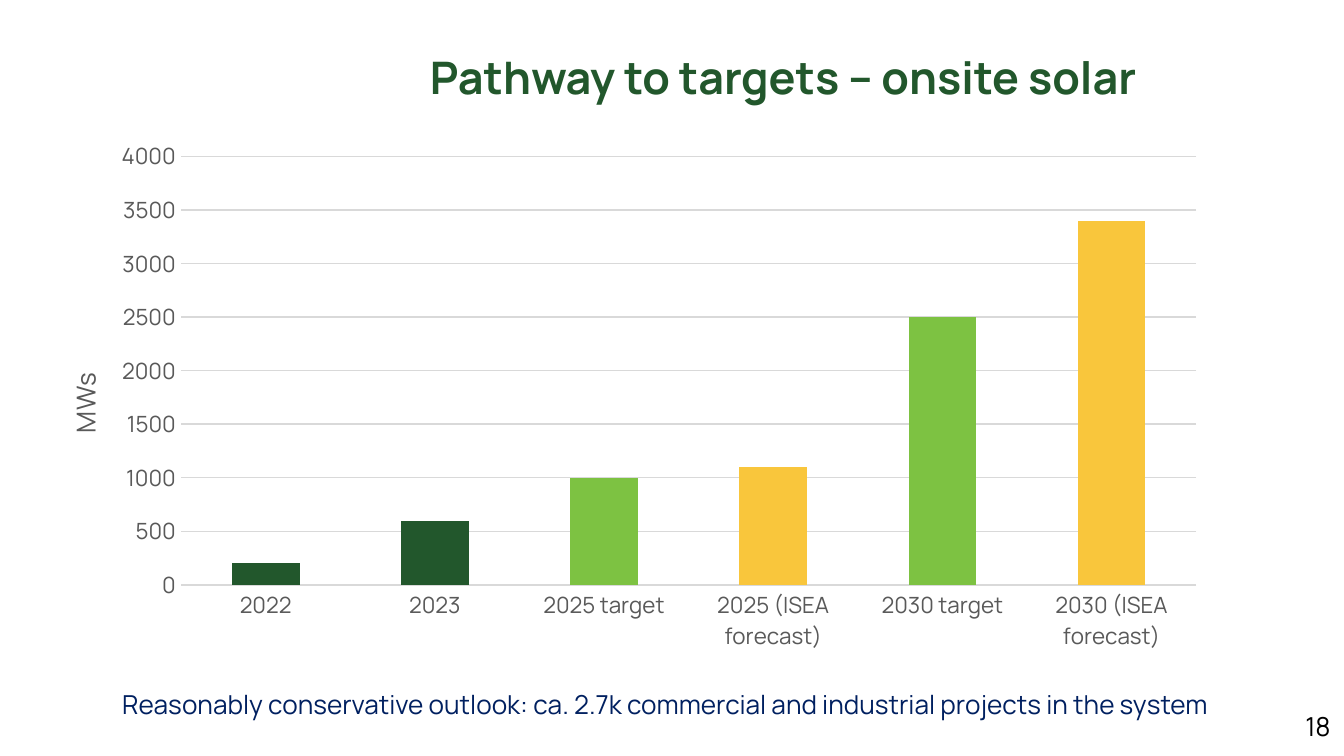
import pptx
import pptx.chart.data
import pptx.dml.color
import pptx.enum.chart
import pptx.enum.text
import pptx.oxml
import pptx.oxml.ns
import pptx.util
from pptx.util import Cm

FONT = "Manrope"
DARK_GREEN = pptx.dml.color.RGBColor(0x22, 0x57, 0x2C)
LIGHT_GREEN = pptx.dml.color.RGBColor(0x7D, 0xC2, 0x42)
YELLOW = pptx.dml.color.RGBColor(0xF9, 0xC6, 0x3C)
NAVY = pptx.dml.color.RGBColor(0x00, 0x20, 0x60)
BLACK = pptx.dml.color.RGBColor(0x00, 0x00, 0x00)
GREY = pptx.dml.color.RGBColor(0x59, 0x59, 0x59)
GRID = pptx.dml.color.RGBColor(0xD9, 0xD9, 0xD9)

BARS = [
    ("2022", 200, DARK_GREEN),
    ("2023", 600, DARK_GREEN),
    ("2025 target", 1000, LIGHT_GREEN),
    ("2025 (ISEA forecast)", 1100, YELLOW),
    ("2030 target", 2500, LIGHT_GREEN),
    ("2030 (ISEA forecast)", 3400, YELLOW),
]


def style_font(font, size, color, bold=False):
    """Apply the deck font with the given size, colour and weight."""
    font.name = FONT
    font.size = pptx.util.Pt(size)
    font.bold = bold
    font.color.rgb = color


def fill_text(shape, text, size, color, align, anchor, bold=False):
    """Write one styled paragraph into a shape."""
    frame = shape.text_frame
    frame.word_wrap = True
    frame.auto_size = pptx.enum.text.MSO_AUTO_SIZE.NONE
    frame.vertical_anchor = anchor
    frame.text = text
    para = frame.paragraphs[0]
    para.alignment = align
    style_font(para.runs[0].font, size, color, bold)


def add_title(page, box, text):
    """Move the title placeholder into the box and format it."""
    title = page.shapes.title
    title.left, title.top, title.width, title.height = box
    fill_text(title, text, 24, DARK_GREEN, pptx.enum.text.PP_ALIGN.CENTER,
              pptx.enum.text.MSO_ANCHOR.BOTTOM, bold=True)
    frame = title.text_frame
    frame.margin_left = frame.margin_right = Cm(0.25)
    frame.margin_top = frame.margin_bottom = Cm(0.25)


def add_caption(page, box, text, color, align):
    """Add a line of 14 point text, centred vertically in the box."""
    fill_text(page.shapes.add_textbox(*box), text, 14, color, align,
              pptx.enum.text.MSO_ANCHOR.MIDDLE)


def set_layout(parent, position, **values):
    """Give a chart part a manual layout at a child position."""
    tag = pptx.oxml.ns.qn("c:layout")
    for old in parent.findall(tag):
        parent.remove(old)
    items = "".join(f'<c:{name} val="{value}"/>' for name, value in values.items())
    parent.insert(position, pptx.oxml.parse_xml(
        f'<c:layout {pptx.oxml.ns.nsdecls("c")}>'
        f"<c:manualLayout>{items}</c:manualLayout></c:layout>"))


def format_axes(chart):
    """Style both axes, the gridlines and the unit title."""
    for axis in (chart.category_axis, chart.value_axis):
        axis.major_tick_mark = pptx.enum.chart.XL_TICK_MARK.NONE
        axis.minor_tick_mark = pptx.enum.chart.XL_TICK_MARK.NONE
        style_font(axis.tick_labels.font, 12, GREY)
    values = chart.value_axis
    values.minimum_scale, values.maximum_scale, values.major_unit = 0, 4000, 500
    values.format.line.fill.background()
    values.has_major_gridlines = True
    for line in (chart.category_axis.format.line, values.major_gridlines.format.line):
        line.color.rgb = GRID
        line.width = pptx.util.Pt(0.75)
    frame = values.axis_title.text_frame
    frame.text = "MWs"
    style_font(frame.paragraphs[0].runs[0].font, 14, GREY)
    title = values.axis_title._element
    set_layout(title, 1, xMode="edge", yMode="edge", x=0.01, y=0.44)


def add_capacity_chart(page, box):
    """Add the column chart of installed and expected capacity."""
    data = pptx.chart.data.CategoryChartData()
    data.categories = [name for name, _, _ in BARS]
    data.add_series("Series 1", [value for _, value, _ in BARS])
    chart = page.shapes.add_chart(
        pptx.enum.chart.XL_CHART_TYPE.COLUMN_STACKED, *box, data).chart
    chart.has_legend = False
    chart.has_title = False
    style_font(chart.font, 10, BLACK)
    plot = chart.plots[0]
    plot.gap_width, plot.overlap, plot.vary_by_categories = 150, 100, False
    series = plot.series[0]
    series.format.fill.solid()
    series.format.fill.fore_color.rgb = DARK_GREEN
    for index, (_, _, color) in enumerate(BARS):
        if color != DARK_GREEN:
            fill = series.points[index].format.fill
            fill.solid()
            fill.fore_color.rgb = color
    format_axes(chart)
    area = chart._chartSpace.find(".//" + pptx.oxml.ns.qn("c:plotArea"))
    set_layout(area, 0, layoutTarget="inner", xMode="edge", yMode="edge",
               x=0.114, y=0.042, w=0.87, h=0.809)


def main():
    """Build the one-slide deck and save it."""
    deck = pptx.Presentation()
    deck.slide_width, deck.slide_height = Cm(25.4), Cm(14.29)
    page = deck.slides.add_slide(deck.slide_layouts[5])
    align = pptx.enum.text.PP_ALIGN
    add_title(page, (Cm(4.32), Cm(0.28), Cm(20.96), Cm(1.93)),
              "Pathway to targets – onsite solar")
    add_caption(page, (Cm(24.18), Cm(13.18), Cm(1.22), Cm(1.09)), "18",
                BLACK, align.RIGHT)
    add_capacity_chart(page, (Cm(0.91), Cm(2.54), Cm(22.05), Cm(10.01)))
    add_caption(page, (Cm(2.06), Cm(12.88), Cm(21.92), Cm(0.86)),
                "Reasonably conservative outlook: ca. 2.7k commercial and "
                "industrial projects in the system", NAVY, align.LEFT)
    deck.save("out.pptx")


if __name__ == "__main__":
    main()
